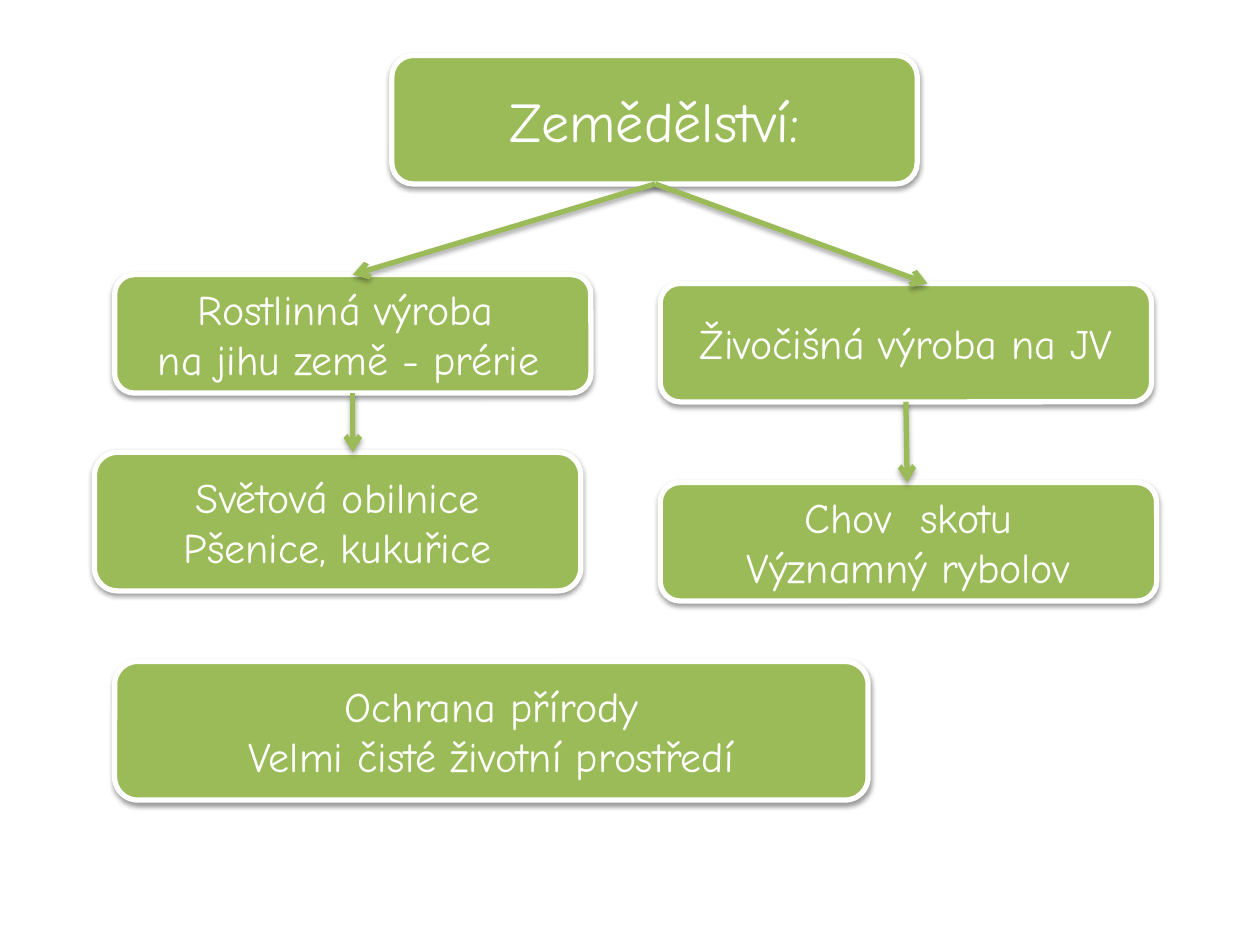
from lxml import etree
from pptx import Presentation
from pptx.dml.color import RGBColor
from pptx.enum.shapes import MSO_CONNECTOR, MSO_SHAPE
from pptx.enum.text import MSO_ANCHOR, PP_ALIGN
from pptx.oxml.ns import qn
from pptx.util import Inches, Pt

ROUNDED = MSO_SHAPE.ROUNDED_RECTANGLE
STRAIGHT = MSO_CONNECTOR.STRAIGHT
MIDDLE = MSO_ANCHOR.MIDDLE
CENTER, LEFT = PP_ALIGN.CENTER, PP_ALIGN.LEFT

THEME = {
    "green": RGBColor(0x9B, 0xBB, 0x59),
    "white": RGBColor(0xFF, 0xFF, 0xFF),
    "shadow": "000000",
    "font": "Comic Neue",
    "heading": Pt(32),
    "body": Pt(24),
    "line": Pt(3),
}

deck = Presentation()
deck.slide_width, deck.slide_height = Inches(10), Inches(7.5)
page = deck.slides.add_slide(deck.slide_layouts[6])

# Grid of 100 columns by 75 rows
COLUMN = deck.slide_width / 100
ROW = deck.slide_height / 75


def add_shadow(shape, distance, opacity):
    """Give a shape or connector a soft shadow that falls straight down."""
    effects = etree.SubElement(shape._element.spPr, qn("a:effectLst"))
    shadow = etree.SubElement(
        effects, qn("a:outerShdw"), blurRad=str(Pt(3.1)),
        dist=str(Pt(distance)), dir="5400000", rotWithShape="0")
    color = etree.SubElement(shadow, qn("a:srgbClr"), val=THEME["shadow"])
    etree.SubElement(color, qn("a:alpha"), val=str(opacity * 1000))


# Boxes: left, top, width, height in grid cells, type size, lines with alignment
BOXES = {
    "animals": (52.4, 22.5, 39, 9.4, "body",
                [("Živočišná výroba na JV", CENTER)]),
    "grain": (7.5, 35.9, 38.6, 11, "body",
              [("Světová obilnice", CENTER), ("Pšenice, kukuřice", CENTER)]),
    "farming": (31.1, 4.4, 41.7, 10.2, "heading",
                [("Zemědělství:", CENTER)]),
    "crops": (9.1, 21.8, 37.8, 9.4, "body",
              [("Rostlinná výroba ", CENTER), ("na jihu země - prérie", LEFT)]),
    "cattle": (52.4, 38.3, 39.4, 9.4, "body",
               [("Chov  skotu", CENTER), ("Významný rybolov", CENTER)]),
    "nature": (9.1, 52.5, 59.8, 11, "body",
               [("Ochrana přírody", CENTER),
                ("Velmi čisté životní prostředí", CENTER)]),
}

boxes = {}
for name, (left, top, width, height, size, lines) in BOXES.items():
    box = page.shapes.add_shape(
        ROUNDED, round(left * COLUMN), round(top * ROW),
        round(width * COLUMN), round(height * ROW))
    box.fill.solid()
    box.fill.fore_color.rgb = THEME["green"]
    box.line.color.rgb = THEME["white"]
    box.line.width = THEME["line"]
    add_shadow(box, 1.6, 38)
    boxes[name] = box

    frame = box.text_frame
    frame.word_wrap = True
    frame.vertical_anchor = MIDDLE
    for index, (text, alignment) in enumerate(lines):
        para = frame.add_paragraph() if index else frame.paragraphs[0]
        para.alignment = alignment
        if alignment == LEFT:
            para._p.get_or_add_pPr().set("marL", str(round(2 * COLUMN)))
        span = para.add_run()
        span.text = text
        span.font.name = THEME["font"]
        span.font.size = THEME[size]
        span.font.color.rgb = THEME["white"]

# Arrows: from the bottom of one box to the top of the next, with both columns
ARROWS = [
    ("farming", 52, "crops", 28),
    ("farming", 52, "animals", 73.6),
    ("crops", 28, "grain", 28),
    ("animals", 71.9, "cattle", 72),
]

for source, start, target, end in ARROWS:
    upper, lower = boxes[source], boxes[target]
    arrow = page.shapes.add_connector(
        STRAIGHT, round(start * COLUMN), upper.top + upper.height,
        round(end * COLUMN), lower.top)
    arrow.line.color.rgb = THEME["green"]
    arrow.line.width = THEME["line"]
    etree.SubElement(arrow.line._get_or_add_ln(), qn("a:tailEnd"), type="arrow")
    add_shadow(arrow, 1.8, 35)

deck.save("out.pptx")
